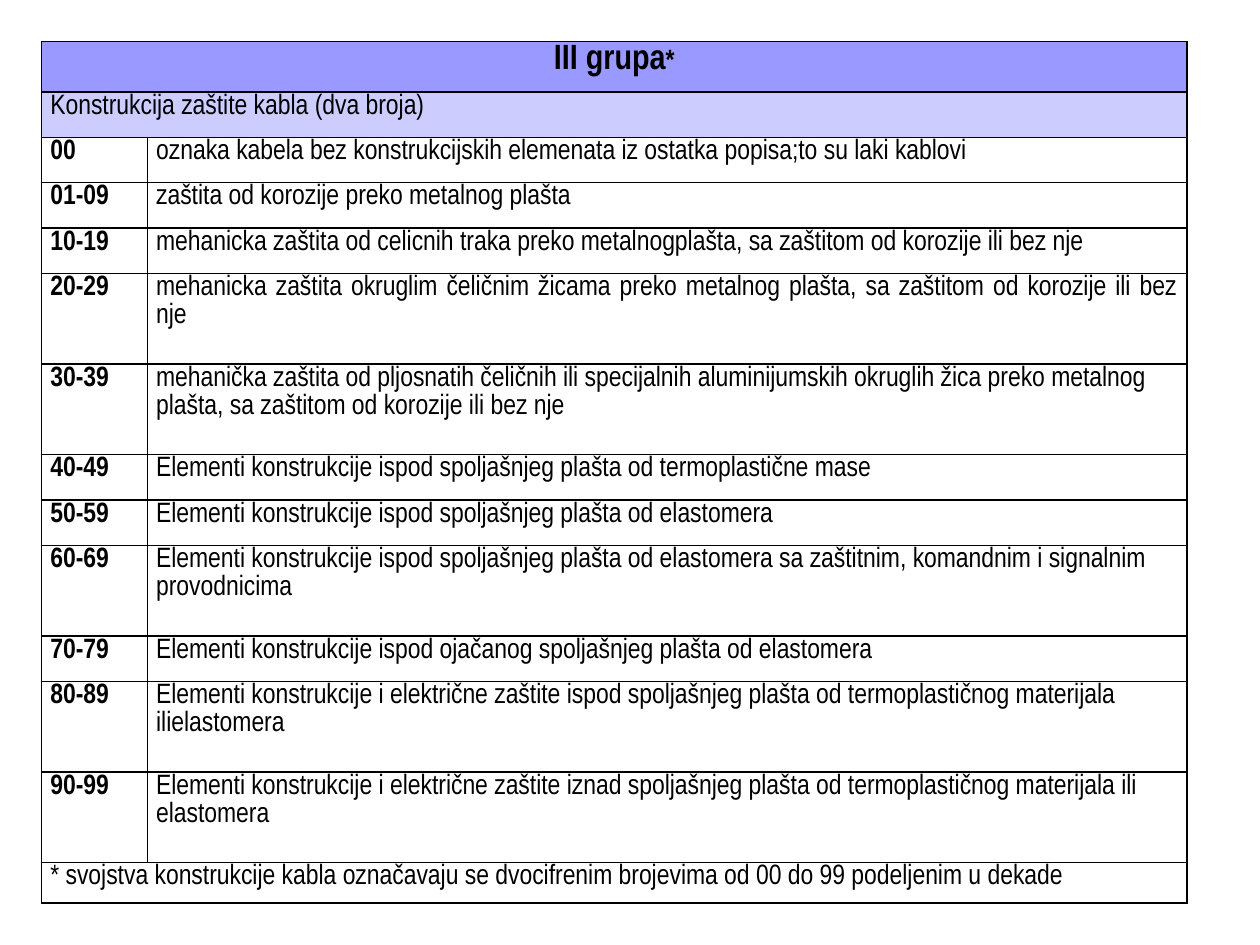
from lxml.etree import SubElement
from pptx import Presentation
from pptx.dml.color import RGBColor
from pptx.enum.text import MSO_ANCHOR, PP_ALIGN as Align
from pptx.oxml.ns import qn
from pptx.util import Inches, Pt

FONT = "Arial Narrow"
BLACK, HEADER_FILL, SUBHEADER_FILL = "000000", "9999FF", "CCCCFF"
COLUMN_WIDTHS = (0.84, 8.25)
HEADER_HEIGHT, LINE_HEIGHT, FOOTNOTE_HEIGHT = 0.4, 0.36, 0.32

# Code range, description, lines of text, alignment of the description
DECADES = [
    ("00", "oznaka kabela bez konstrukcijskih elemenata iz ostatka popisa;to su laki kablovi", 1, Align.LEFT),
    ("01-09", "zaštita od korozije preko metalnog plašta", 1, Align.JUSTIFY),
    ("10-19", "mehanicka zaštita od celicnih traka preko metalnogplašta, "
              "sa zaštitom od korozije ili bez nje", 1, Align.LEFT),
    ("20-29", "mehanicka zaštita okruglim čeličnim žicama preko metalnog plašta, "
              "sa zaštitom od korozije ili bez nje", 2, Align.JUSTIFY),
    ("30-39", "mehanička zaštita od pljosnatih čeličnih ili specijalnih aluminijumskih okruglih žica "
              "preko metalnog plašta, sa zaštitom od korozije ili bez nje", 2, Align.LEFT),
    ("40-49", "Elementi konstrukcije ispod spoljašnjeg plašta od termoplastične mase", 1, Align.LEFT),
    ("50-59", "Elementi konstrukcije ispod spoljašnjeg plašta od elastomera", 1, Align.LEFT),
    ("60-69", "Elementi konstrukcije ispod spoljašnjeg plašta od elastomera "
              "sa zaštitnim, komandnim i signalnim provodnicima", 2, Align.LEFT),
    ("70-79", "Elementi konstrukcije ispod ojačanog spoljašnjeg plašta od elastomera", 1, Align.LEFT),
    ("80-89", "Elementi konstrukcije i električne zaštite ispod spoljašnjeg plašta "
              "od termoplastičnog materijala ilielastomera", 2, Align.LEFT),
    ("90-99", "Elementi konstrukcije i električne zaštite iznad spoljašnjeg plašta "
              "od termoplastičnog materijala ili elastomera", 2, Align.LEFT),
]
FOOTNOTE = "* svojstva konstrukcije kabla označavaju se dvocifrenim brojevima od 00 do 99 podeljenim u dekade"


def rgb(color):
    return RGBColor.from_string(color)


def add_text(paragraph, text, size=16, bold=False, color=BLACK, align=Align.LEFT):
    paragraph.alignment = align
    paragraph.line_spacing = 1.07
    run = paragraph.add_run()
    run.text = text
    run.font.name = FONT
    run.font.size = Pt(size)
    run.font.bold = bold
    run.font.color.rgb = rgb(color)


def style_cell(cell, fill=None):
    cell.margin_left = cell.margin_right = Inches(0.07)
    cell.margin_top = cell.margin_bottom = 0
    cell.vertical_anchor = MSO_ANCHOR.TOP

    # Borders come before the fill in the cell properties
    properties = cell._tc.get_or_add_tcPr()
    for side in ("a:lnL", "a:lnR", "a:lnT", "a:lnB"):
        border = SubElement(properties, qn(side), w=str(Pt(1)))
        solid = SubElement(border, qn("a:solidFill"))
        SubElement(solid, qn("a:srgbClr"), val=BLACK)
    if fill:
        cell.fill.solid()
        cell.fill.fore_color.rgb = rgb(fill)
    else:
        cell.fill.background()


def add_cable_table(slide, left, top, width, height):
    heights = [HEADER_HEIGHT, LINE_HEIGHT]
    heights += [lines * LINE_HEIGHT for _, _, lines, _ in DECADES]
    heights.append(FOOTNOTE_HEIGHT)
    table = slide.shapes.add_table(len(heights), len(COLUMN_WIDTHS), left, top, width, height).table
    table.first_row = table.horz_banding = False
    for column, column_width in zip(table.columns, COLUMN_WIDTHS):
        column.width = Inches(column_width)
    for row, row_height in zip(table.rows, heights):
        row.height = Inches(row_height)

    # Fills, borders and full-width rows
    footnote_row = len(heights) - 1
    row_fills = {0: HEADER_FILL, 1: SUBHEADER_FILL}
    for index, row in enumerate(table.rows):
        for cell in row.cells:
            style_cell(cell, row_fills.get(index))
    for index in (0, 1, footnote_row):
        table.cell(index, 0).merge(table.cell(index, 1))

    def first_paragraph(row, column):
        return table.cell(row, column).text_frame.paragraphs[0]

    # Headings
    heading = first_paragraph(0, 0)
    add_text(heading, "III grupa", size=20, bold=True, align=Align.CENTER)
    add_text(heading, "*", bold=True, align=Align.CENTER)
    add_text(first_paragraph(1, 0), "Konstrukcija zaštite kabla (dva broja)")

    # Decades and footnote
    for index, (code, description, _, align) in enumerate(DECADES, start=2):
        add_text(first_paragraph(index, 0), code, bold=True, align=Align.JUSTIFY)
        add_text(first_paragraph(index, 1), description, align=align)
    add_text(first_paragraph(footnote_row, 0), FOOTNOTE)


def main():
    presentation = Presentation()
    presentation.slide_width = Inches(10)
    presentation.slide_height = Inches(7.5)
    slide = presentation.slides.add_slide(presentation.slide_layouts[6])
    add_cable_table(slide, Inches(0.33), Inches(0.33), Inches(9.09), Inches(6.84))
    presentation.save("out.pptx")


if __name__ == "__main__":
    main()
